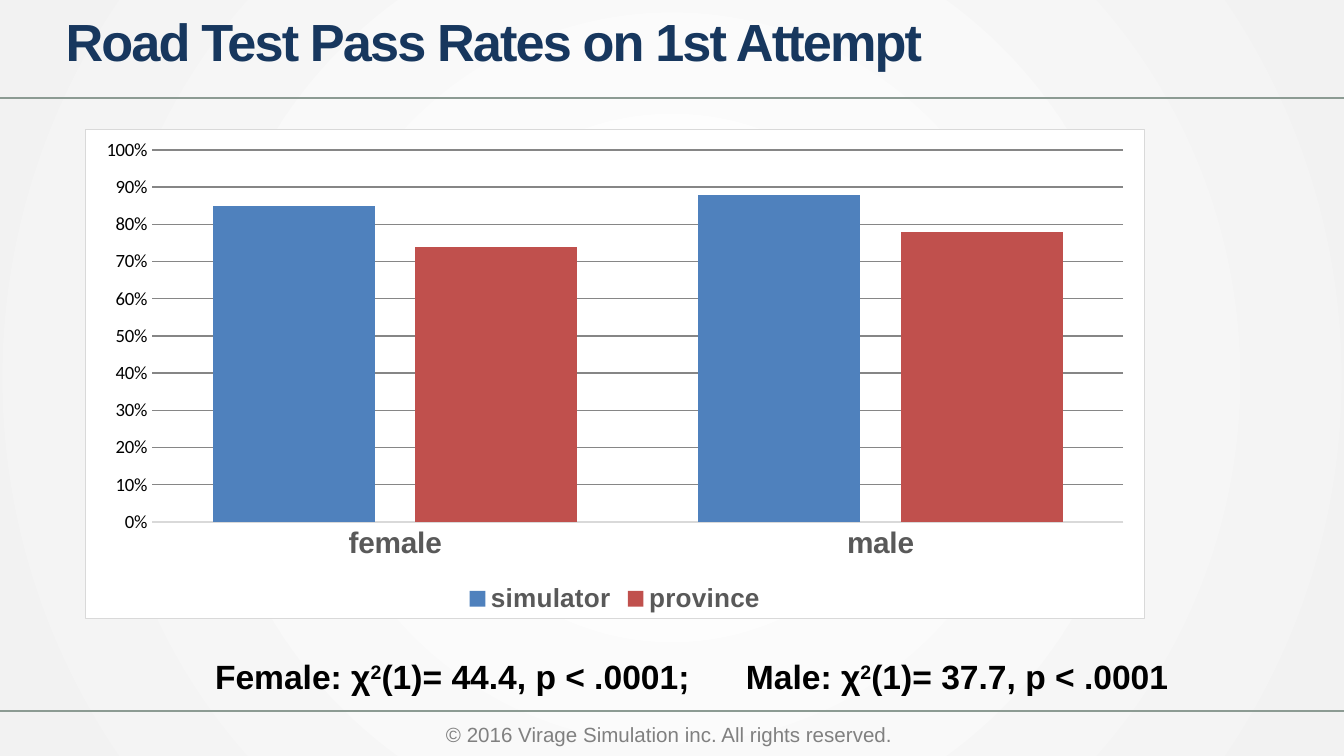
from lxml import etree
from pptx import Presentation
from pptx.chart.data import CategoryChartData
from pptx.dml.color import RGBColor
from pptx.enum.chart import XL_CHART_TYPE as ChartType
from pptx.enum.chart import XL_LEGEND_POSITION as LegendPosition
from pptx.enum.chart import XL_TICK_MARK as TickMark
from pptx.enum.shapes import MSO_CONNECTOR as Connector
from pptx.enum.text import MSO_ANCHOR as Anchor
from pptx.enum.text import PP_ALIGN as Align
from pptx.oxml import parse_xml
from pptx.oxml.ns import nsdecls, qn
from pptx.util import Inches, Pt

PALE_GRAY = "D9D9D9"
TEXT_GRAY = "595959"


def color(hex_code):
    return RGBColor.from_string(hex_code)


def style_font(font, size, hex_code, bold=False, name="Arial"):
    font.name = name
    font.size = Pt(size)
    font.bold = bold
    font.color.rgb = color(hex_code)


def style_line(line, hex_code, width=0.75):
    line.color.rgb = color(hex_code)
    line.width = Pt(width)


def paint_background(page):
    fill = page.background.fill
    fill.gradient()
    for stop, position, hex_code in zip(
        fill.gradient_stops, (0.08, 1), ("FFFFFF", "F2F2F2")
    ):
        stop.position = position
        stop.color.rgb = color(hex_code)
    # Turn the linear gradient into a circular one
    linear = next(page.background._cSld.iter(qn("a:lin")))
    circle = parse_xml(
        f'<a:path {nsdecls("a")} path="circle">'
        '<a:fillToRect l="50000" t="50000" r="50000" b="50000"/></a:path>'
    )
    linear.getparent().replace(linear, circle)


def add_rule(page, top):
    rule = page.shapes.add_connector(
        Connector.STRAIGHT, Inches(10), Inches(top), Inches(0), Inches(top)
    )
    style_line(rule.line, "8C9B93")
    etree.SubElement(rule._element.spPr, qn("a:effectLst"))


def add_text(page, text, left, top, width, height, *, size, hex_code, bold=False,
             align=Align.LEFT, wrap=True, inset=0.1, spacing=None, tab=None):
    """Add a one-paragraph text box; parts between ^ marks are superscript."""
    box = page.shapes.add_textbox(
        Inches(left), Inches(top), Inches(width), Inches(height)
    )
    frame = box.text_frame
    frame.word_wrap = wrap
    frame.vertical_anchor = Anchor.MIDDLE
    frame.margin_left = Inches(inset)
    para = frame.paragraphs[0]
    para.alignment = align
    if tab:
        tabs = etree.SubElement(para._p.get_or_add_pPr(), qn("a:tabLst"))
        etree.SubElement(tabs, qn("a:tab"), pos=str(Inches(tab)), algn="l")
    for index, part in enumerate(text.split("^")):
        span = para.add_run()
        span.text = part
        style_font(span.font, size, hex_code, bold)
        properties = span._r.get_or_add_rPr()
        if index % 2:
            properties.set("baseline", "30000")
        if spacing:
            properties.set("spc", str(int(spacing * 100)))


def add_pass_rate_chart(page):
    data = CategoryChartData(number_format="0%")
    data.categories = ["female", "male"]
    data.add_series("simulator", [0.85, 0.88])
    data.add_series("province", [0.74, 0.78])
    chart = page.shapes.add_chart(
        ChartType.COLUMN_CLUSTERED,
        Inches(0.63), Inches(0.96), Inches(7.89), Inches(3.65), data,
    ).chart
    chart.has_title = False
    style_font(chart.font, 10, "000000", name="Calibri")

    # Columns
    plot = chart.plots[0]
    plot.vary_by_categories = False
    plot.gap_width = 75
    plot.overlap = -25
    for series, hex_code in zip(plot.series, ("4F81BD", "C0504D")):
        series.format.fill.solid()
        series.format.fill.fore_color.rgb = color(hex_code)

    # Axes
    categories, rates = chart.category_axis, chart.value_axis
    for axis in (categories, rates):
        axis.major_tick_mark = axis.minor_tick_mark = TickMark.NONE
    style_font(categories.tick_labels.font, 16, TEXT_GRAY, bold=True)
    style_line(categories.format.line, PALE_GRAY)
    rates.minimum_scale, rates.maximum_scale = 0, 1
    rates.major_unit = 0.1
    rates.tick_labels.number_format = "0%"
    rates.tick_labels.number_format_is_linked = False
    rates.format.line.fill.background()
    style_line(rates.major_gridlines.format.line, "868686")

    # Legend
    chart.has_legend = True
    chart.legend.position = LegendPosition.BOTTOM
    chart.legend.include_in_layout = False
    style_font(chart.legend.font, 14, TEXT_GRAY, bold=True)

    # White panel with a thin border
    panel = parse_xml(
        f'<c:spPr {nsdecls("c", "a")}>'
        '<a:solidFill><a:srgbClr val="FFFFFF"/></a:solidFill>'
        f'<a:ln w="{Pt(0.75)}"><a:solidFill><a:srgbClr val="{PALE_GRAY}"/>'
        "</a:solidFill></a:ln></c:spPr>"
    )
    chart._chartSpace.find(qn("c:chart")).addnext(panel)


def main():
    deck = Presentation()
    # Widescreen, 16:9
    deck.slide_width = Inches(10)
    deck.slide_height = Inches(10 * 9 / 16)
    page = deck.slides.add_slide(deck.slide_layouts[6])
    paint_background(page)

    # Header and footer
    for top in (0.73, 5.29):
        add_rule(page, top)
    add_text(page, "© 2016 Virage Simulation inc. All rights reserved.",
             3.2, 5.32, 3.56, 0.29, size=11, hex_code="808080",
             align=Align.CENTER, wrap=False)
    add_text(page, "Road Test Pass Rates on 1st Attempt", 0.39, 0.04, 7.47, 0.53,
             size=28, hex_code="17375E", bold=True, spacing=-1)

    # Results
    add_pass_rate_chart(page)
    add_text(page, "Female: χ^2^(1)= 44.4, p < .0001;\tMale: χ^2^(1)= 37.7, p < .0001",
             0.95, 4.83, 8.42, 0.4, size=18, hex_code="000000", bold=True,
             inset=0.65, tab=3.95)

    deck.save("out.pptx")


if __name__ == "__main__":
    main()
